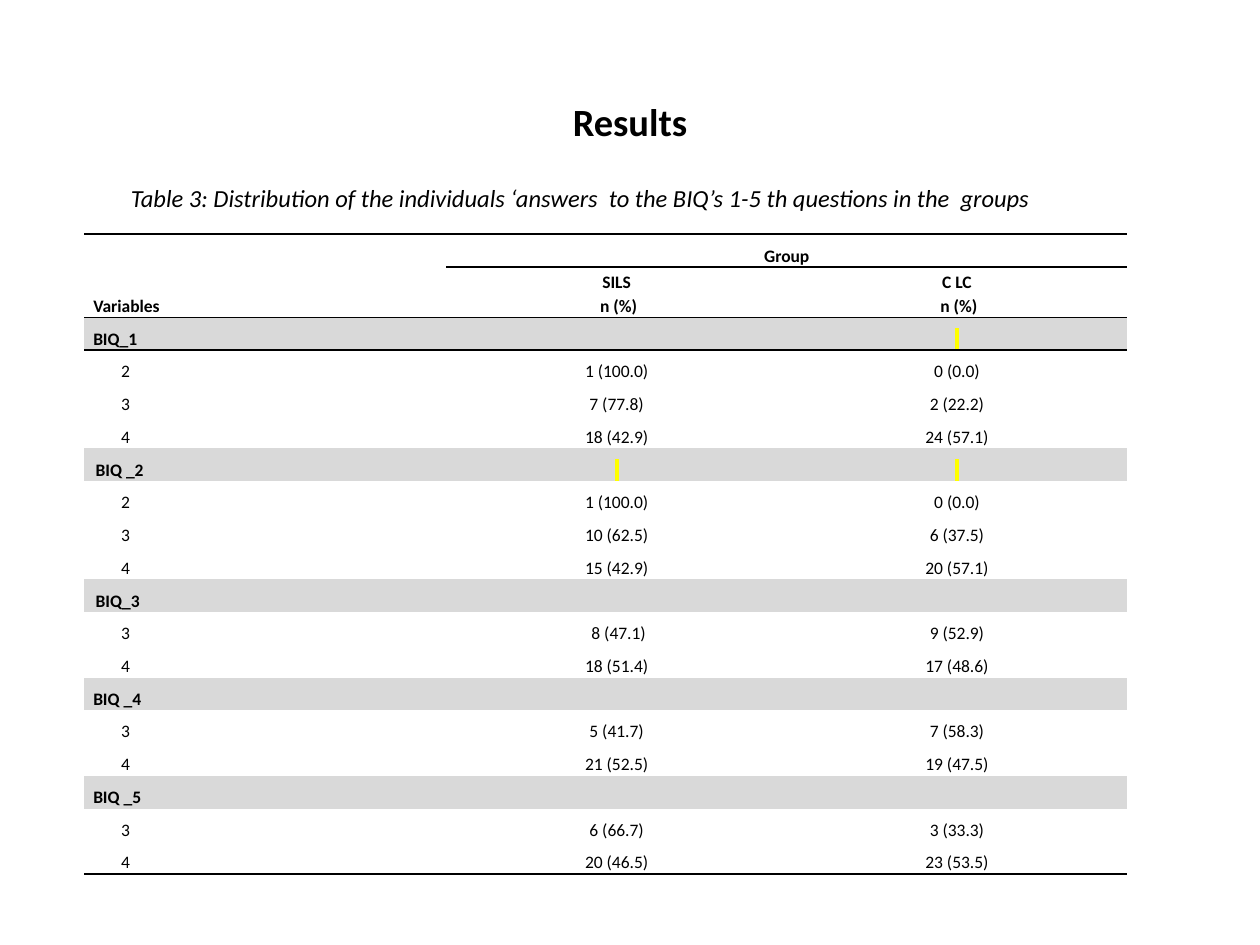
from dataclasses import dataclass

from lxml import etree
from pptx import Presentation
from pptx.dml.color import RGBColor
from pptx.enum.text import MSO_ANCHOR, PP_ALIGN
from pptx.oxml.ns import qn
from pptx.util import Cm, Pt

BLACK = RGBColor(0x00, 0x00, 0x00)
GREY = RGBColor(0xD9, 0xD9, 0xD9)
YELLOW = RGBColor(0xFF, 0xFF, 0x00)
FONT = "Calibri"
LEFT, CENTER = PP_ALIGN.LEFT, PP_ALIGN.CENTER
MIDDLE, BOTTOM = MSO_ANCHOR.MIDDLE, MSO_ANCHOR.BOTTOM
NO_STYLE_NO_GRID = "{2D5ABB26-0587-4C30-8999-92F81FD0307C}"

COLUMN_WIDTHS = (Cm(7.3), Cm(6.86), Cm(6.86))
ROW_HEIGHT = Cm(0.66)
SUBHEADER_HEIGHT = Cm(1.02)
ANSWER_INDENT = Cm(0.56)


@dataclass
class Question:
    name: str
    answers: list[tuple[str, str, str]]
    indent: Cm = Cm(0)
    marked_columns: tuple[int, ...] = ()
    merged: bool = False


QUESTIONS = [
    Question("BIQ_1", [("2", "1 (100.0)", "0 (0.0)"),
                       ("3", "7 (77.8)", "2 (22.2)"),
                       ("4", "18 (42.9)", "24 (57.1)")],
             marked_columns=(2,), merged=True),
    Question("BIQ _2", [("2", "1 (100.0)", "0 (0.0)"),
                        ("3", "10 (62.5)", "6 (37.5)"),
                        ("4", "15 (42.9)", "20 (57.1)")],
             indent=Cm(0.05), marked_columns=(1, 2)),
    Question("BIQ_3", [("3", " 8 (47.1)", "9 (52.9)"),
                       ("4", "18 (51.4)", "17 (48.6)")], indent=Cm(0.05)),
    Question("BIQ _4", [("3", "5 (41.7)", "7 (58.3)"),
                        ("4", "21 (52.5)", "19 (47.5)")]),
    Question("BIQ _5", [("3", "6 (66.7)", "3 (33.3)"),
                        ("4", "20 (46.5)", "23 (53.5)")]),
]


def write_text(frame, text: str, *, size: float = 10, bold: bool = False,
               italic: bool = False, align=LEFT, spacing: float = 1.0,
               indent: int = 0, highlight: RGBColor | None = None) -> None:
    """Fill a text frame with one paragraph for each line of text."""
    for index, line in enumerate(text.split("\n")):
        paragraph = frame.paragraphs[0] if index == 0 else frame.add_paragraph()
        paragraph.alignment = align
        paragraph.line_spacing = spacing
        if indent:
            paragraph._p.get_or_add_pPr().set("marL", str(int(indent)))
        if not line:
            end = etree.SubElement(paragraph._p, qn("a:endParaRPr"))
            end.set("sz", str(int(size * 100)))
            continue
        run = paragraph.add_run()
        run.text = line
        font = run.font
        font.name, font.size = FONT, Pt(size)
        font.bold, font.italic = bold, italic
        font.color.rgb = BLACK
        if highlight is not None:
            mark = etree.Element(qn("a:highlight"))
            etree.SubElement(mark, qn("a:srgbClr")).set("val", str(highlight))
            font._element.find(qn("a:solidFill")).addnext(mark)


def add_text_box(slide, left, top, width, height):
    frame = slide.shapes.add_textbox(left, top, width, height).text_frame
    frame.word_wrap = True
    return frame


def set_border(cell, side: str, width: float) -> None:
    """Draw one side of a cell: lnT (top) or lnB (bottom)."""
    properties = cell._tc.get_or_add_tcPr()
    line = etree.Element(qn(f"a:{side}"), w=str(Pt(width)))
    fill = etree.SubElement(line, qn("a:solidFill"))
    etree.SubElement(fill, qn("a:srgbClr")).set("val", str(BLACK))
    borders = [child for child in properties
               if child.tag in (qn("a:lnT"), qn("a:lnB"))]
    properties.insert(len(borders), line)


def fill_cell(cell, text: str, *, fill: RGBColor | None = None,
              anchor=MIDDLE, spacing: float = 1.5, **text_format) -> None:
    cell.margin_left = cell.margin_right = Cm(0.18)
    cell.margin_top = cell.margin_bottom = 0
    cell.vertical_anchor = anchor
    if fill is None:
        cell.fill.background()
    else:
        cell.fill.solid()
        cell.fill.fore_color.rgb = fill
    write_text(cell.text_frame, text, spacing=spacing, **text_format)


def add_header(table) -> None:
    table.cell(0, 0).merge(table.cell(1, 0))
    table.cell(0, 1).merge(table.cell(0, 2))
    header = {"bold": True, "anchor": BOTTOM}
    fill_cell(table.cell(0, 0), "Variables", **header)
    fill_cell(table.cell(0, 1), "Group", align=CENTER, **header)
    for column, group in enumerate(("SILS", "C LC"), start=1):
        fill_cell(table.cell(1, column), f"{group}\n n (%)",
                  align=CENTER, spacing=1.15, **header)


def add_question(table, row: int, question: Question) -> int:
    """Write a grey heading row with its answers; return the next free row."""
    if question.merged:
        table.cell(row, 0).merge(table.cell(row, 1))
    fill_cell(table.cell(row, 0), question.name, fill=GREY, bold=True,
              indent=question.indent)
    for column in (1, 2):
        marked = column in question.marked_columns
        fill_cell(table.cell(row, column), " " if marked else "", fill=GREY,
                  align=CENTER, highlight=YELLOW if marked else None)
    for row, answer in enumerate(question.answers, start=row + 1):
        fill_cell(table.cell(row, 0), answer[0], indent=ANSWER_INDENT)
        for column in (1, 2):
            fill_cell(table.cell(row, column), answer[column], align=CENTER)
    return row + 1


def add_results_table(slide) -> None:
    row_count = 2 + sum(1 + len(question.answers) for question in QUESTIONS)
    height = ROW_HEIGHT * (row_count - 1) + SUBHEADER_HEIGHT
    table = slide.shapes.add_table(row_count, len(COLUMN_WIDTHS), Cm(1.7),
                                   Cm(4.72), sum(COLUMN_WIDTHS), height).table
    table.first_row = table.horz_banding = False
    table._tbl.tblPr.find(qn("a:tableStyleId")).text = NO_STYLE_NO_GRID
    for column, width in zip(table.columns, COLUMN_WIDTHS):
        column.width = width
    for row in table.rows:
        row.height = ROW_HEIGHT
    table.rows[1].height = SUBHEADER_HEIGHT

    add_header(table)
    next_row = 2
    for question in QUESTIONS:
        next_row = add_question(table, next_row, question)

    # Rules above, inside and below the table
    for column in range(len(COLUMN_WIDTHS)):
        set_border(table.cell(0, column), "lnT", 1.5)
        set_border(table.cell(0, column), "lnB", 1)
        if column > 0:
            set_border(table.cell(1, column), "lnT", 1)
        set_border(table.cell(1, column), "lnB", 1)
        set_border(table.cell(2, column), "lnT", 1)
        set_border(table.cell(row_count - 1, column), "lnB", 1.5)


def main() -> None:
    presentation = Presentation()
    presentation.slide_width, presentation.slide_height = Cm(25.4), Cm(19.05)
    slide = presentation.slides.add_slide(presentation.slide_layouts[6])

    # Title
    title = add_text_box(slide, Cm(1.27), Cm(1.96), Cm(22.86), Cm(0.97))
    title.vertical_anchor = MIDDLE
    write_text(title, "Results", size=22, bold=True, align=CENTER)

    # Table caption
    caption = add_text_box(slide, Cm(1.27), Cm(3.33), Cm(22.86), Cm(15.39))
    caption.margin_left, caption.margin_top = Cm(1.37), Cm(0.36)
    write_text(caption, "Table 3: Distribution of the individuals ‘answers  to "
               "the BIQ’s 1-5 th questions in the  groups",
               size=14, italic=True)

    add_results_table(slide)
    presentation.save("out.pptx")


if __name__ == "__main__":
    main()
